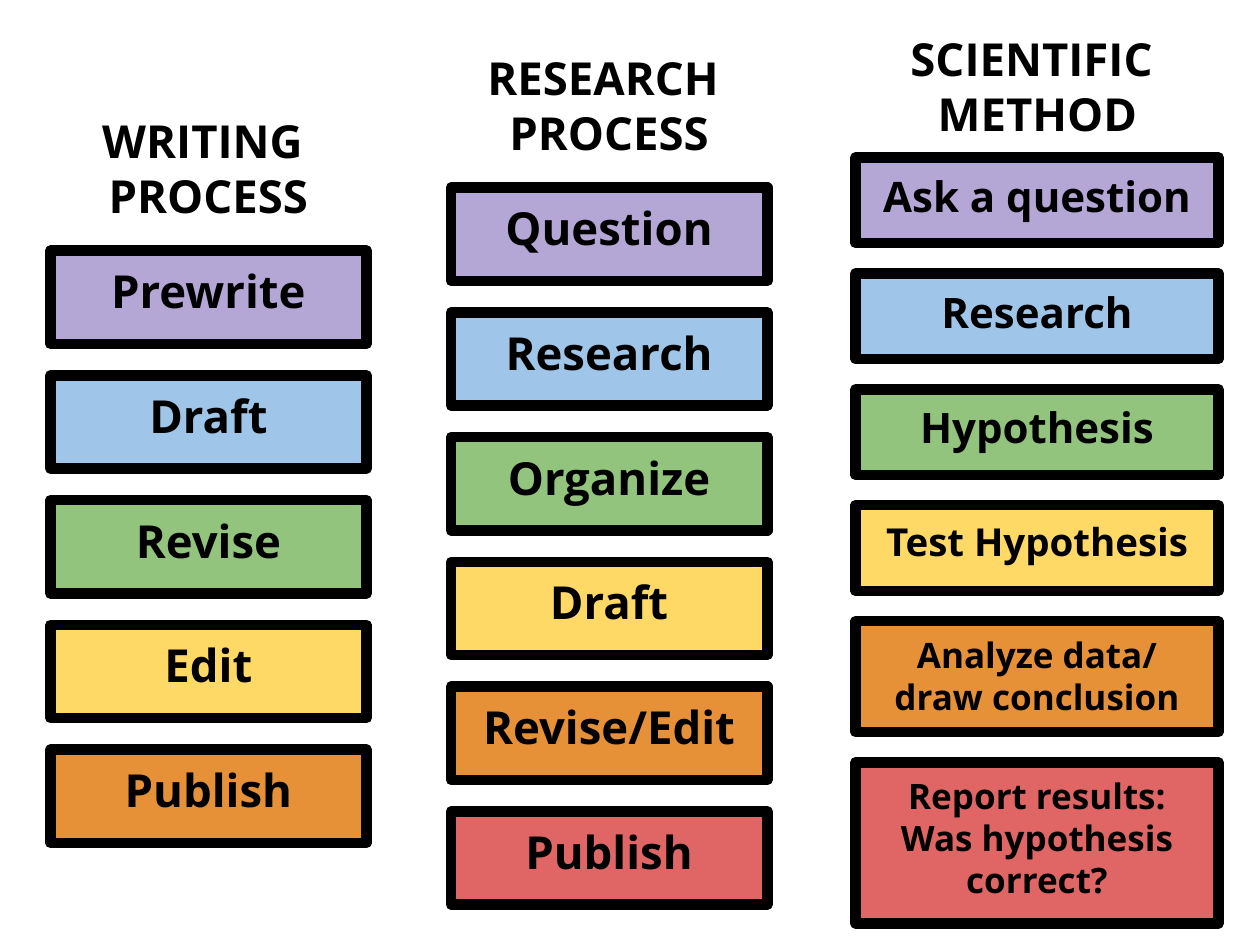
from pptx import Presentation
from pptx.dml.color import RGBColor
from pptx.enum.shapes import MSO_SHAPE
from pptx.enum.text import MSO_ANCHOR, PP_ALIGN
from pptx.util import Inches, Pt

RECT = MSO_SHAPE.RECTANGLE
TOP = MSO_ANCHOR.TOP
CENTER = PP_ALIGN.CENTER

FONT = "Open Sans"
COLORS = {
    "ink": "000000",
    "purple": "B4A7D6",
    "blue": "9FC5E8",
    "green": "93C47D",
    "yellow": "FFD966",
    "orange": "E69138",
    "red": "E06666",
}
STEP_COLORS = ["purple", "blue", "green", "yellow", "orange", "red"]

# Heading box and step grid of each column, in inches.
# A step is (text, font size, height); the size and height may be left out.
COLUMNS = [
    {
        "heading": "WRITING \nPROCESS",
        "heading_box": (0.22, 0.8, 2.87, 1.09),
        "left": 0.4, "top": 1.99, "width": 2.51, "height": 0.74, "gap": 0.25,
        "size": 26,
        "steps": [("Prewrite",), ("Draft",), ("Revise",), ("Edit",),
                  ("Publish",)],
    },
    {
        "heading": "RESEARCH \nPROCESS",
        "heading_box": (3.4, 0.3, 2.87, 1.09),
        "left": 3.58, "top": 1.49, "width": 2.51, "height": 0.74, "gap": 0.25,
        "size": 26,
        "steps": [("Question",), ("Research",), ("Organize",), ("Draft",),
                  ("Revise/Edit",), ("Publish",)],
    },
    {
        "heading": "SCIENTIFIC \nMETHOD",
        "heading_box": (6.31, 0.15, 3.85, 1.05),
        "left": 6.79, "top": 1.25, "width": 2.88, "height": 0.68, "gap": 0.24,
        "size": 24,
        "steps": [("Ask a question",), ("Research",), ("Hypothesis",),
                  ("Test Hypothesis", 22),
                  ("Analyze data/\ndraw conclusion", 20, 0.88),
                  ("Report results:\nWas hypothesis correct?", 20, 1.28)],
    },
]


def rgb(name):
    return RGBColor.from_string(COLORS[name])


def set_text(sp, text, size):
    tf = sp.text_frame
    tf.word_wrap = True
    tf.vertical_anchor = TOP
    tf.margin_left = tf.margin_right = Inches(0.1)
    tf.margin_top = tf.margin_bottom = Inches(0.1)
    tf.text = text
    for p in tf.paragraphs:
        p.alignment = CENTER
        p.font.name = FONT
        p.font.size = Pt(size)
        p.font.bold = True
        p.font.color.rgb = rgb("ink")


def add_heading(shapes, text, box):
    sp = shapes.add_textbox(*map(Inches, box))
    set_text(sp, text, 26)


def add_step(shapes, text, size, color, box):
    sp = shapes.add_shape(RECT, *map(Inches, box))
    sp.shadow.inherit = False
    sp.fill.solid()
    sp.fill.fore_color.rgb = rgb(color)
    sp.line.color.rgb = rgb("ink")
    sp.line.width = Pt(6)
    set_text(sp, text, size)


def add_column(s, column):
    """Group a heading with the steps stacked below it."""
    shapes = s.shapes.add_group_shape().shapes
    add_heading(shapes, column["heading"], column["heading_box"])
    top = column["top"]
    for color, (text, *custom) in zip(STEP_COLORS, column["steps"]):
        size = custom[0] if custom else column["size"]
        height = custom[1] if len(custom) > 1 else column["height"]
        add_step(shapes, text, size, color,
                 (column["left"], top, column["width"], height))
        top += height + column["gap"]


def main():
    prs = Presentation()
    prs.slide_width, prs.slide_height = Inches(10), Inches(7.5)
    s = prs.slides.add_slide(prs.slide_layouts[6])
    for column in COLUMNS:
        add_column(s, column)
    prs.save("out.pptx")


if __name__ == "__main__":
    main()
